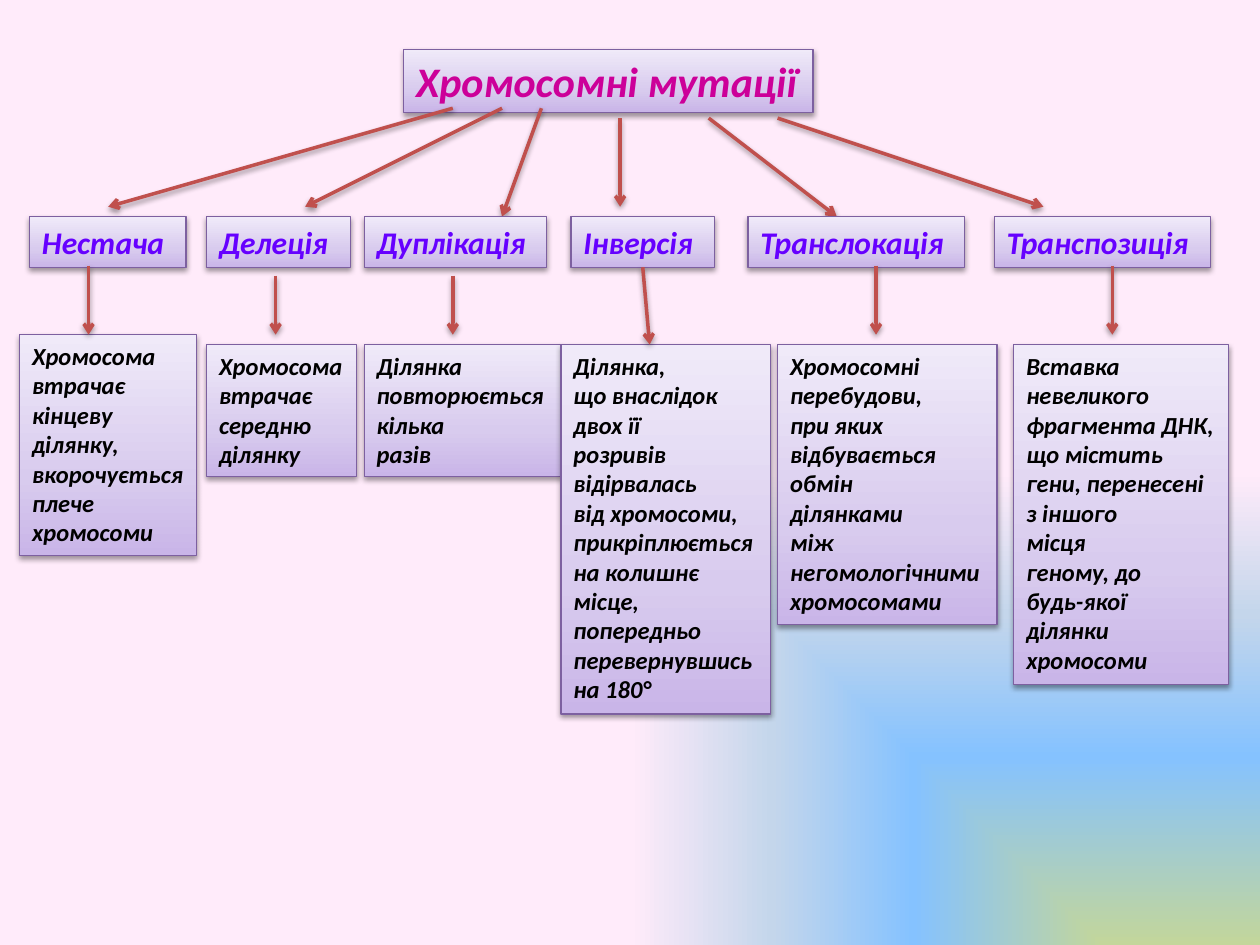
from pptx import Presentation
from pptx.dml.color import RGBColor
from pptx.enum.shapes import MSO_CONNECTOR as Conn
from pptx.enum.text import MSO_ANCHOR as Anchor, MSO_AUTO_SIZE as Auto, PP_ALIGN as Align
from pptx.oxml import parse_xml
from pptx.oxml.ns import nsdecls, qn
from pptx.util import Inches, Pt

UNIT = Inches(10) / 128
LILAC = [(0, "C9B5E8"), (35, "D8CBEE"), (100, "F0EAF9")]
SKY = [(0, "C3D69B"), (40, "85C2FF"), (70, "C4D6EB"), (100, "FFEBFA")]
UP = '<a:lin ang="16200000" scaled="0"/>'
CORNER = '<a:path path="rect"><a:fillToRect l="100000" t="100000"/></a:path>'

COLUMNS = [
    (3, 15.9, "Нестача", (6, 5, 6, 12), (-1, 12, 18),
     ["Хромосома", "втрачає", "кінцеву", "ділянку,", "вкорочується", "плече", "хромосоми"]),
    (21, 14.6, "Делеція", (7, 6, 7, 12), (0, 13, 15.2),
     ["Хромосома", "втрачає", "середню", "ділянку"]),
    (37, 18.5, "Дуплікація", (9, 6, 9, 12), (0, 13, 20),
     ["Ділянка", "повторюється", "кілька", "разів"]),
    (58, 14.6, "Інверсія", (None, 5, 8, 13), (-1, 13, 21.3),
     ["Ділянка,", "що внаслідок", "двох її", "розривів", "відірвалась", "від хромосоми,",
      "прикріплюється", "на колишнє", "місце,", "попередньо", "перевернувшись", "на 180°"]),
    (76, 22, "Транслокація", (13, 5, 13, 12), (3, 13, 22.3),
     ["Хромосомні", "перебудови,", "при яких", "відбувається", "обмін", "ділянками",
      "між", "негомологічними", "хромосомами"]),
    (101, 22, "Транспозиція", (12, 5, 12, 12), (2, 13, 21.8),
     ["Вставка", "невеликого", "фрагмента ДНК,", "що містить", "гени, перенесені",
      "з іншого", "місця", "геному, до", "будь-якої", "ділянки", "хромосоми"]),
]
RAYS = [(5, 6, -30, 16), (10, 6, -10, 16), (14, 6, 10, 17),
        (22, 7, 22, 16), (31, 7, 44, 17), (38, 7, 65, 16)]


def grid(*nums):
    """Turn grid units into whole lengths."""
    return [round(n * UNIT) for n in nums]


def tint(hue):
    """Make a colour from a hex string."""
    return RGBColor.from_string(hue)


def blend(fill, owner, stops, way):
    """Give the owner of a fill a gradient with these stops."""
    fill.gradient()
    marks = "".join(f'<a:gs pos="{pos * 1000}"><a:srgbClr val="{hue}"/></a:gs>'
                    for pos, hue in stops)
    old = next(owner.iter(qn("a:gradFill")))
    old.getparent().replace(old, parse_xml(
        f'<a:gradFill {nsdecls("a")} rotWithShape="1"><a:gsLst>{marks}</a:gsLst>{way}</a:gradFill>'))


def shade(props):
    """Add a soft shadow below."""
    props.append(parse_xml(
        f'<a:effectLst {nsdecls("a")}><a:outerShdw blurRad="40000" dist="20000" dir="5400000" '
        'rotWithShape="0"><a:srgbClr val="000000"><a:alpha val="38000"/></a:srgbClr>'
        '</a:outerShdw></a:effectLst>'))


def panel(shape, box, lines, size, hue, fit=Auto.SHAPE_TO_FIT_TEXT):
    """Place and format a lilac panel with one paragraph per line."""
    shape.left, shape.top, shape.width, shape.height = grid(*box)
    blend(shape.fill, shape.element.spPr, LILAC, UP)
    shape.line.color.rgb, shape.line.width = tint("7D60A0"), Pt(0.75)
    shade(shape.element.spPr)
    frame = shape.text_frame
    frame.word_wrap, frame.auto_size = False, fit
    frame.vertical_anchor = Anchor.TOP
    for i, line in enumerate(lines):
        para = frame.add_paragraph() if i else frame.paragraphs[0]
        para.alignment = Align.LEFT
        run = para.add_run()
        run.text = line
        font = run.font
        font.name, font.size, font.bold, font.italic = "Calibri", Pt(size), True, True
        font.color.rgb = tint(hue)
    return shape


def arrow(slide, *ends):
    """Draw a red arrow between two grid points."""
    link = slide.shapes.add_connector(Conn.STRAIGHT, *grid(*ends))
    link.line.color.rgb, link.line.width = tint("C0504D"), Pt(2)
    props = link.element.spPr
    props.find(qn("a:ln")).append(parse_xml(f'<a:tailEnd {nsdecls("a")} type="arrow"/>'))
    shade(props)
    return link


def header(slide, box):
    """Place the title and the arrows that fan out from it."""
    panel(slide.shapes.title, box, ["Хромосомні мутації"], 24, "CC0099", Auto.NONE)
    x, y = box[:2]
    for dx, dy, ex, ey in RAYS:
        arrow(slide, x + dx, y + dy, x + ex, y + ey)


def column(slide, box, name, drop, note, lines):
    """Place a kind of mutation, its arrow and its note."""
    x, y, wide, _ = box
    new = slide.shapes.add_textbox
    head = panel(new(0, 0, 0, 0), box, [name], 18, "6600FF")
    dx, top, wid = note
    panel(new(0, 0, 0, 0), (x + dx, y + top, wid, 1.3 + 3.02 * len(lines)),
          lines, 14, "000000")
    start, dy, ex, ey = drop
    mid = wide / 2 if start is None else start
    link = arrow(slide, x + mid, y + dy, x + ex, y + ey)
    if start is None:
        link.begin_connect(head, 2)


def main():
    """Build the slide and save it."""
    deck = Presentation()
    deck.slide_width, deck.slide_height = Inches(10), Inches(7.5)
    slide = deck.slides.add_slide(deck.slide_layouts[5])
    blend(slide.background.fill, slide.element, SKY, CORNER)
    header(slide, (41, 5, 41.6, 6.4))
    for left, wide, *rest in COLUMNS:
        column(slide, (left, 22, wide, 5.15), *rest)
    deck.save("out.pptx")


if __name__ == "__main__":
    main()
